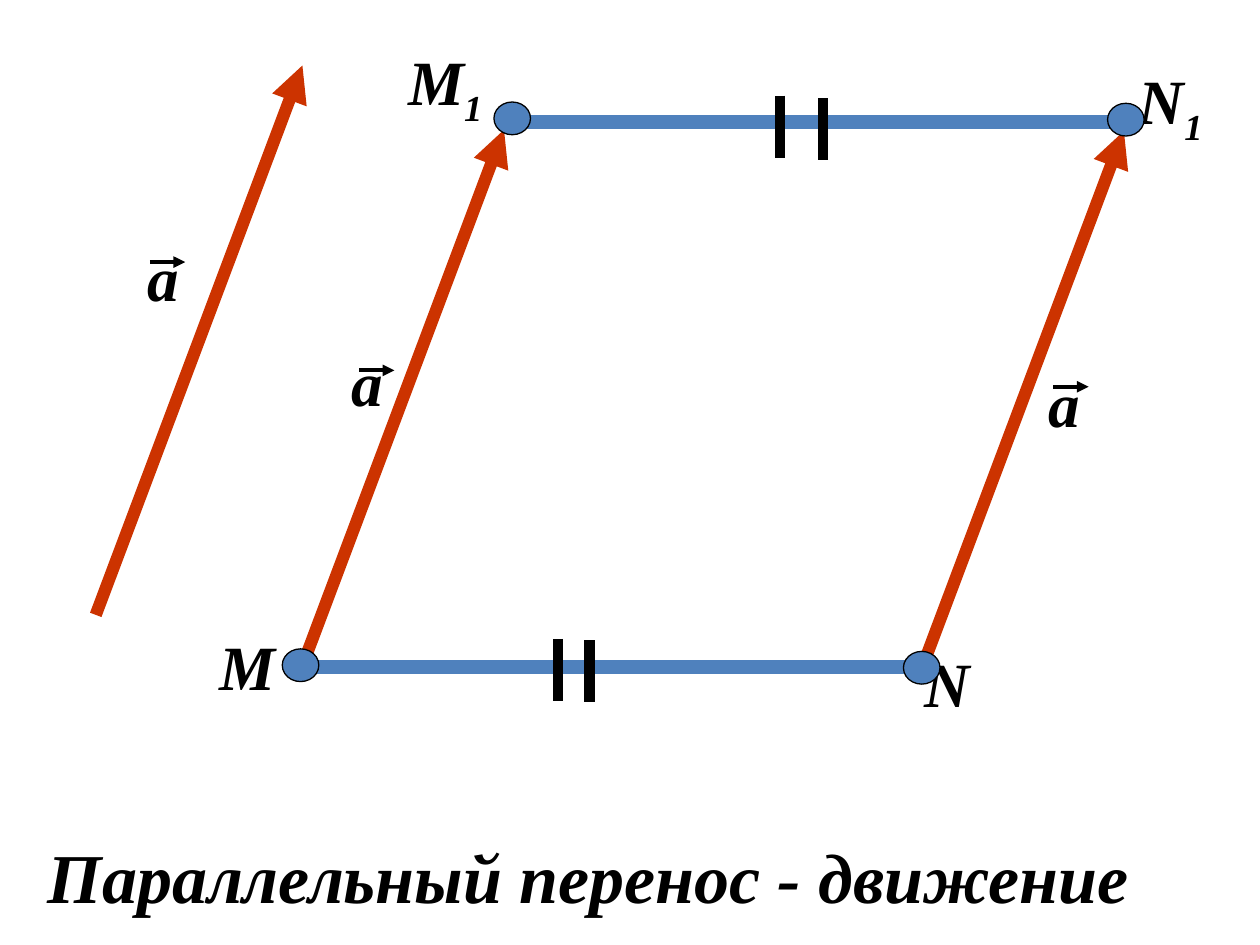
"""Builds the slide on parallel translation as a motion."""
from lxml import etree
from pptx import Presentation
from pptx import util as u
from pptx.dml.color import RGBColor
from pptx.enum import shapes, text
from pptx.oxml.ns import qn

COLORS = {"vector": "CC3300", "segment": "4F81BD", "ink": "000000"}
FONT = "Times New Roman"
POINT_SIZE = (0.29, 0.26)
TICK_LENGTH = 0.49
VECTOR_SHIFT = (1.64, -4.36)


def color(name):
    """Return the named palette colour."""
    return RGBColor.from_string(COLORS[name])


def add_line(slide, start, end, tone, width, arrow=False):
    """Draw a straight line, with an arrowhead at its end if asked."""
    stroke = slide.shapes.add_connector(
        shapes.MSO_CONNECTOR.STRAIGHT, *map(u.Inches, (*start, *end)))
    stroke.line.color.rgb = color(tone)
    stroke.line.width = u.Pt(width)
    properties = stroke.element.spPr
    if arrow:
        etree.SubElement(properties.find(qn("a:ln")), qn("a:tailEnd"), type="triangle")
    etree.SubElement(properties, qn("a:effectLst"))


def add_vector(slide, x, y):
    """Draw the translation vector from its starting point."""
    dx, dy = VECTOR_SHIFT
    add_line(slide, (x, y), (x + dx, y + dy), "vector", 7, arrow=True)


def add_label(slide, left, top, width, words, index="", size=36, height=0.7):
    """Write a bold italic label with an optional lower index."""
    label = slide.shapes.add_textbox(*map(u.Inches, (left, top, width, height)))
    frame = label.text_frame
    frame.word_wrap = True
    frame.auto_size = text.MSO_AUTO_SIZE.SHAPE_TO_FIT_TEXT
    paragraph = frame.paragraphs[0]
    paragraph.text = words
    if index:
        subscript = paragraph.add_run()
        subscript.text = index
        subscript.font._element.set("baseline", "-25000")
    for run in paragraph.runs:
        run.font.name = FONT
        run.font.size = u.Pt(size)
        run.font.bold = run.font.italic = True
        run.font.color.rgb = color("ink")


def add_point(slide, left, top):
    """Draw a vertex of the parallelogram."""
    point = slide.shapes.add_shape(
        shapes.MSO_SHAPE.OVAL, *map(u.Inches, (left, top, *POINT_SIZE)))
    point.shadow.inherit = False
    point.fill.solid()
    point.fill.fore_color.rgb = color("segment")
    point.line.color.rgb = color("ink")
    point.line.width = u.Pt(0.75)


def main():
    """Build and save the slide."""
    deck = Presentation()
    deck.slide_width, deck.slide_height = u.Inches(10), u.Inches(7.5)
    slide = deck.slides.add_slide(deck.slide_layouts[6])

    for x, y in ((2.36, 5.39), (0.76, 4.88), (7.28, 5.4)):
        add_vector(slide, x, y)
    for left, right, y in ((2.4, 7.32, 5.29), (4.03, 8.94, 0.97)):
        add_line(slide, (left, y), (right, y), "segment", 8)

    for left, top in ((1.07, 1.84), (8.22, 2.84), (2.69, 2.68)):
        add_label(slide, left, top, 0.45, "а")
    for x, y in ((1.19, 2.08), (2.85, 2.94), (8.36, 3.07)):
        add_line(slide, (x, y), (x + 0.28, y), "ink", 2.25, arrow=True)

    add_label(slide, 1.64, 4.93, 0.65, "М")
    add_label(slide, 3.14, 0.29, 0.86, "М", "1")
    add_label(slide, 8.94, 0.44, 0.86, "N", "1")
    add_label(slide, 7.24, 5.07, 0.86, "N")
    for left, top in ((2.24, 5.15), (8.79, 0.82), (3.92, 0.81), (7.17, 5.17)):
        add_point(slide, left, top)

    add_label(slide, 0.28, 6.57, 10, "Параллельный перенос - движение",
              size=40, height=0.77)
    for x, y in ((6.19, 0.76), (6.53, 0.78), (4.68, 5.08), (4.43, 5.07)):
        add_line(slide, (x, y), (x, y + TICK_LENGTH), "ink", 6)

    deck.save("out.pptx")


if __name__ == "__main__":
    main()
